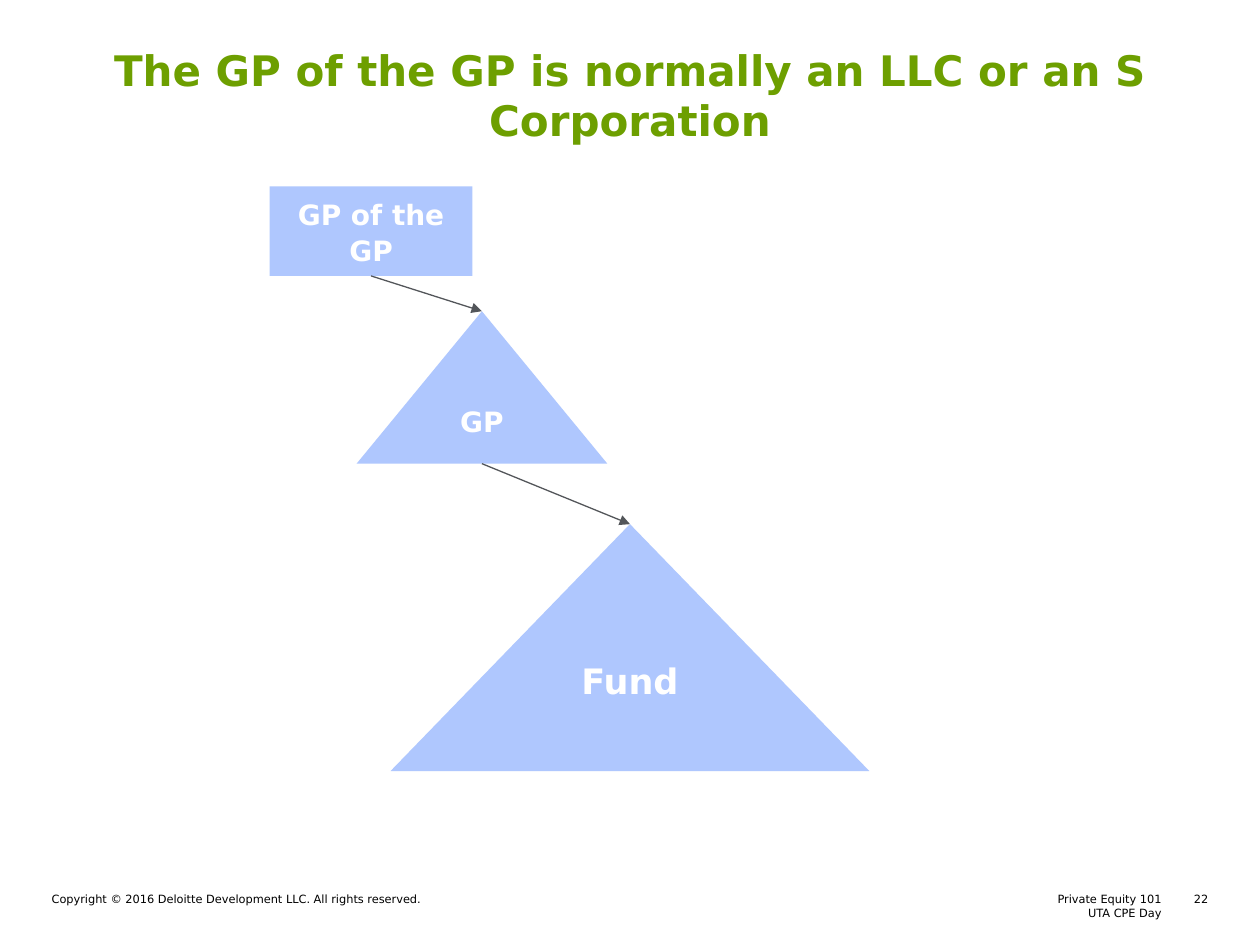
from pptx import Presentation
from pptx.dml.color import RGBColor
from pptx.enum.shapes import MSO_CONNECTOR, MSO_SHAPE
from pptx.enum.text import MSO_ANCHOR as Anchor, MSO_AUTO_SIZE, PP_ALIGN as Align
from pptx.oxml.ns import qn
from pptx.util import Inches, Pt
from lxml.etree import SubElement

# Content
FONT = "DejaVu Sans"
GREEN, BLUE, GREY, WHITE, BLACK = "6D9F00", "AFC7FE", "53565A", "FFFFFF", "000000"
TITLE = "The GP of the GP is normally an LLC or an S Corporation"

# name, preset, place, text size, anchor, insets, line spacing
ENTITIES = [
    ("Fund", MSO_SHAPE.ISOSCELES_TRIANGLE, (3.1, 4.16, 3.8, 1.96), 20,
     Anchor.MIDDLE, (0.1, 0.05, 0.1, 0.5), None),
    ("GP", MSO_SHAPE.ISOSCELES_TRIANGLE, (2.83, 2.47, 1.99, 1.21), 16,
     Anchor.BOTTOM, (0.1, 0, 0.1, 0.2), 1.06),
    ("GP of the GP", MSO_SHAPE.RECTANGLE, (2.14, 1.48, 1.61, 0.71), 16,
     Anchor.MIDDLE, (0.1, 0.1, 0.1, 0.1), 1.06),
]
LINKS = [("GP", "Fund"), ("GP of the GP", "GP")]

# text, place, alignment
FOOTERS = [
    ("Private Equity 101\nUTA CPE Day", (5.2, 7.08, 4.02, 0.22), Align.RIGHT),
    ("Copyright © 2016 Deloitte Development LLC. All rights reserved.",
     (0.41, 7.08, 4.39, 0.22), Align.LEFT),
    ("22", (9.34, 7.08, 0.25, 0.11), Align.RIGHT),
]


def color(value):
    return RGBColor.from_string(value)


def inches(values):
    return [Inches(value) for value in values]


def write(shape, text, size, ink, align, anchor=Anchor.TOP,
          insets=(0, 0, 0, 0), bold=False, spacing=None):
    frame = shape.text_frame
    frame.text = text
    frame.word_wrap = True
    frame.auto_size = MSO_AUTO_SIZE.NONE
    frame.vertical_anchor = anchor
    (frame.margin_left, frame.margin_top,
     frame.margin_right, frame.margin_bottom) = inches(insets)
    for para in frame.paragraphs:
        para.alignment = align
        para.space_before = Pt(0)
        para.line_spacing = spacing
        for span in para.runs:
            span.font.name = FONT
            span.font.size = Pt(size)
            span.font.bold = bold
            span.font.color.rgb = color(ink)


def add_entity(page, name, preset, place, size, anchor, insets, spacing):
    shape = page.shapes.add_shape(preset, *inches(place))
    shape.shadow.inherit = False
    shape.fill.solid()
    shape.fill.fore_color.rgb = color(BLUE)
    shape.line.fill.background()
    write(shape, name, size, WHITE, Align.CENTER, anchor, insets, True, spacing)
    return shape


def add_arrow(page, upper, lower):
    """Arrow from the bottom middle of one shape to the top of another."""
    arrow = page.shapes.add_connector(
        MSO_CONNECTOR.STRAIGHT,
        upper.left + upper.width // 2, upper.top + upper.height,
        lower.left + lower.width // 2, lower.top)
    if upper.auto_shape_type == MSO_SHAPE.RECTANGLE:
        arrow.begin_connect(upper, 2)
    arrow.end_connect(lower, 0)
    arrow.line.color.rgb = color(GREY)
    arrow.line.width = Pt(0.75)
    SubElement(arrow.line._get_or_add_ln(), qn("a:tailEnd"), type="triangle")
    SubElement(arrow._element.spPr, qn("a:effectLst"))


def main():
    deck = Presentation()
    deck.slide_width, deck.slide_height = Inches(10), Inches(7.5)
    page = deck.slides.add_slide(deck.slide_layouts[5])

    # Footer
    for text, place, align in FOOTERS:
        box = page.shapes.add_textbox(*inches(place))
        write(box, text, 6.5, BLACK, align)

    # Title
    title = page.shapes.title
    title.left, title.top, title.width, title.height = inches((0.41, 0.35, 9.18, 0.76))
    write(title, TITLE, 24, GREEN, Align.CENTER, bold=True)

    # Ownership chain
    shapes = {entity[0]: add_entity(page, *entity) for entity in ENTITIES}
    for upper, lower in LINKS:
        add_arrow(page, shapes[upper], shapes[lower])

    deck.save("out.pptx")


if __name__ == "__main__":
    main()
